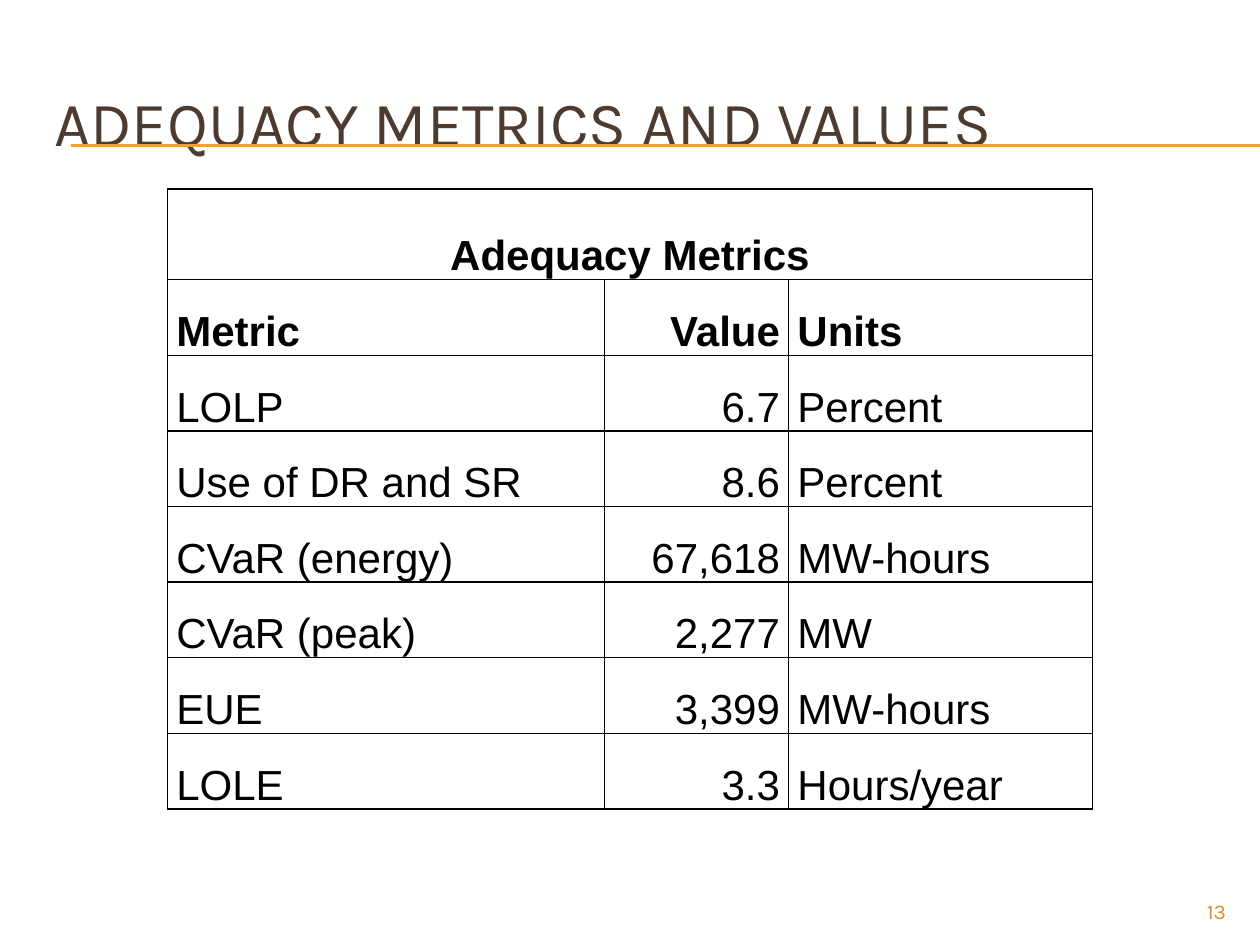
from dataclasses import dataclass

from lxml.etree import SubElement
from pptx import Presentation
from pptx.dml.color import RGBColor as Color
from pptx.enum.shapes import MSO_CONNECTOR as Link
from pptx.enum.text import MSO_ANCHOR as Anchor, PP_ALIGN as Align
from pptx.oxml.ns import qn
from pptx.util import Inches, Pt


@dataclass(frozen=True)
class Theme:
    ink: str = "000000"
    paper: str = "FFFFFF"
    brown: str = "4E3B30"
    gold: str = "F0A22E"
    amber: str = "D48F29"
    head: str = "Karla"
    body: str = "Arial"
    title: int = 36
    cell: int = 24
    note: int = 12
    rule: float = 0.75
    edge: int = 1


THEME = Theme()
ROWS = [
    ("Adequacy Metrics", "", ""),
    ("Metric", "Value", "Units"),
    ("LOLP", "6.7", "Percent"),
    ("Use of DR and SR", "8.6", "Percent"),
    ("CVaR (energy)", "67,618", "MW-hours"),
    ("CVaR (peak)", "2,277", "MW"),
    ("EUE", "3,399", "MW-hours"),
    ("LOLE", "3.3", "Hours/year"),
]
COLS = (3.47, 1.46, 2.41)
ALIGNS = (Align.LEFT, Align.RIGHT, Align.LEFT)


def write(frame, text, font, size, color, align, bold=False):
    frame.text = text
    para = frame.paragraphs[0]
    para.alignment = align
    for run in para.runs:
        run.font.name = font
        run.font.size = Pt(size)
        run.font.bold = bold
        run.font.color.rgb = Color.from_string(color)
    return para


def place(shape, box):
    shape.left, shape.top, shape.width, shape.height = map(Inches, box)


def add_rules(slide, left, right, tops):
    for top in tops:
        line = slide.shapes.add_connector(
            Link.STRAIGHT, Inches(left), Inches(top), Inches(right), Inches(top))
        line.line.color.rgb = Color.from_string(THEME.gold)
        line.line.width = Pt(THEME.rule)
        SubElement(line._element.spPr, qn("a:effectLst"))


def add_title(slide, box, text):
    title = slide.shapes.title
    place(title, box)
    title.text_frame.vertical_anchor = Anchor.MIDDLE
    title.text_frame.word_wrap = True
    write(title.text_frame, text, THEME.head, THEME.title, THEME.brown, Align.LEFT)


def add_number(slide, box, text):
    frame = slide.shapes.add_textbox(*map(Inches, box)).text_frame
    frame.word_wrap = True
    write(frame, text, THEME.head, THEME.note, THEME.amber, Align.RIGHT)


def add_edges(cell):
    props = cell._tc.get_or_add_tcPr()
    for side in ("lnL", "lnR", "lnT", "lnB"):
        line = SubElement(props, qn(f"a:{side}"), w=str(Pt(THEME.edge)))
        fill = SubElement(line, qn("a:solidFill"))
        SubElement(fill, qn("a:srgbClr"), val=THEME.ink)


def style_cell(cell, text, align, bold):
    add_edges(cell)
    cell.fill.solid()
    cell.fill.fore_color.rgb = Color.from_string(THEME.paper)
    cell.vertical_anchor = Anchor.BOTTOM
    cell.margin_left = cell.margin_right = Inches(0.07)
    cell.margin_top = cell.margin_bottom = 0
    para = write(cell.text_frame, text, THEME.body, THEME.cell, THEME.ink, align, bold)
    para.line_spacing = 1.15


def add_metrics(slide, box):
    table = slide.shapes.add_table(len(ROWS), len(COLS), *map(Inches, box)).table
    for col, width in zip(table.columns, COLS):
        col.width = Inches(width)
    for row in table.rows:
        row.height = Inches(0.6)
    table.rows[0].height = Inches(0.72)
    table.cell(0, 0).merge(table.cell(0, len(COLS) - 1))
    for r, row in enumerate(ROWS):
        for c, text in enumerate(row):
            align = ALIGNS[c] if r else Align.CENTER
            style_cell(table.cell(r, c), text, align, r < 2)


def main():
    deck = Presentation()
    deck.slide_width, deck.slide_height = Inches(10), Inches(7.5)
    slide = deck.slides.add_slide(deck.slide_layouts[5])
    add_rules(slide, 0.56, 10, (1.15, 1.16))
    add_title(slide, (0.33, 0.5, 9.5, 0.92), "ADEQUACY METRICS AND VALUES")
    add_number(slide, (9, 7.08, 0.83, 0.27), "13")
    add_metrics(slide, (1.33, 1.5, 7.33, 4.9))
    deck.save("out.pptx")


if __name__ == "__main__":
    main()
